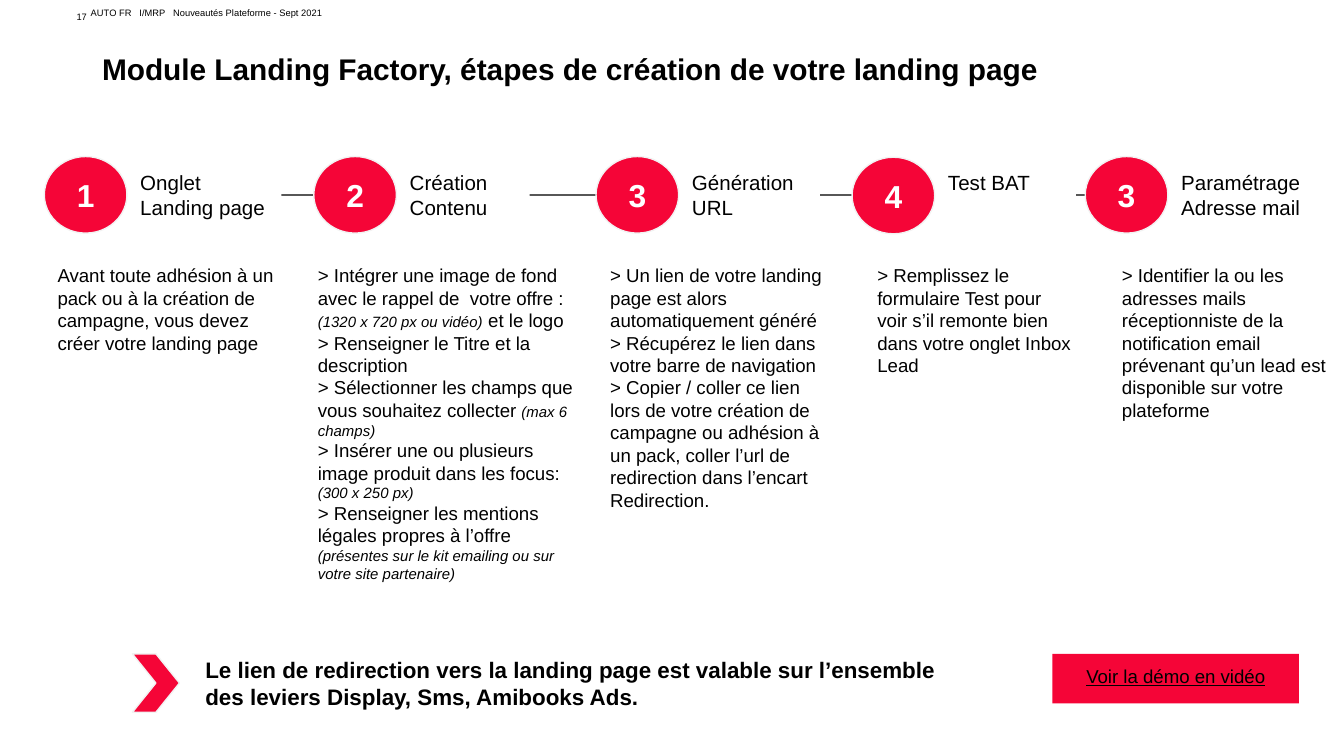
import dataclasses
import typing

import lxml.etree
import pptx
import pptx.dml.color
import pptx.enum.shapes
import pptx.enum.text
import pptx.oxml.ns
import pptx.util

EMU_PER_PX = 4572
RED = "F50537"
BLACK = "000000"
WHITE = "FFFFFF"
PALE = "F2F2F2"
GREY = "575757"
STEP_TOP = 233
CIRCLE_WIDTH = 123
STEP_HEIGHT = 114
DETAILS_TOP = 373

Box = tuple[int, int, int, int]
Align = pptx.enum.text.PP_ALIGN
Anchor = pptx.enum.text.MSO_ANCHOR
AutoSize = pptx.enum.text.MSO_AUTO_SIZE
Preset = pptx.enum.shapes.MSO_SHAPE


@dataclasses.dataclass(frozen=True)
class Step:
    number: str
    label: str
    left: int
    label_width: int
    details: str
    details_left: int
    details_width: int
    details_height: int
    placeholder: typing.Optional[int] = None
    label_height: int = STEP_HEIGHT
    top: int = STEP_TOP


STEPS = [
    Step("1", "Onglet\nLanding page", 66, 230,
         "Avant toute adhésion à un pack ou à la création de campagne, "
         "vous devez créer votre landing page", 66, 374, 176),
    Step("2", "Création\nContenu", 467, 198,
         "> Intégrer une image de fond avec le rappel de  votre offre : "
         "*(1320 x 720 px ou vidéo)* et le logo\n"
         "> Renseigner le Titre et la description\n"
         "> Sélectionner les champs que vous souhaitez collecter *(max 6 champs)*\n"
         "> Insérer une ou plusieurs image produit dans les focus: *(300 x 250 px)*\n"
         "> Renseigner les mentions légales propres à l’offre "
         "*(présentes sur le kit emailing ou sur votre site partenaire)*",
         453, 420, 518, placeholder=1),
    Step("3", "Génération URL", 887, 210,
         "> Un lien de votre landing page est alors automatiquement généré\n"
         "> Récupérez le lien dans votre barre de navigation "
         "> Copier / coller ce lien lors de votre création de campagne ou adhésion "
         "à un pack, coller l’url de redirection dans l’encart Redirection.",
         888, 366, 410, placeholder=2),
    Step("4", "Test BAT", 1268, 210,
         "> Remplissez le formulaire Test pour voir s’il remonte bien "
         "dans votre onglet Inbox Lead", 1286, 332, 208, label_height=78, top=234),
    Step("3", "Paramétrage Adresse mail", 1615, 262,
         "> Identifier la ou les adresses mails réceptionniste de la notification email "
         "prévenant qu’un lead est disponible sur votre plateforme", 1650, 348, 276),
]


def px(length: int) -> int:
    return pptx.util.Emu(length * EMU_PER_PX)


def color(value: str) -> pptx.dml.color.RGBColor:
    return pptx.dml.color.RGBColor.from_string(value)


def write(shape, text: str, *, size: int = 10, fill: str = BLACK, bold: bool = False,
          underline: bool = False, align=Align.LEFT, anchor=Anchor.TOP,
          inset: int = 20, line_spacing: float = 1.0,
          auto_size=AutoSize.SHAPE_TO_FIT_TEXT) -> None:
    frame = shape.text_frame
    frame.word_wrap = True
    frame.auto_size = auto_size
    frame.vertical_anchor = anchor
    frame.margin_left = frame.margin_right = px(inset)
    frame.margin_top = frame.margin_bottom = px(inset)
    for index, content in enumerate(text.split("\n")):
        paragraph = frame.add_paragraph() if index else frame.paragraphs[0]
        paragraph.alignment = align
        paragraph.line_spacing = line_spacing
        paragraph.space_before = paragraph.space_after = pptx.util.Pt(0)
        properties = paragraph._p.get_or_add_pPr()
        properties.set("marL", "0")
        properties.set("indent", "0")
        lxml.etree.SubElement(properties, pptx.oxml.ns.qn("a:buNone"))
        for position, piece in enumerate(content.split("*")):
            if not piece:
                continue
            is_note = position % 2 == 1
            run = paragraph.add_run()
            run.text = piece
            run.font.name = "Arial"
            run.font.size = pptx.util.Pt(8 if is_note else size)
            run.font.italic = is_note
            run.font.bold = bold
            run.font.underline = underline
            run.font.color.rgb = color(fill)


def place(shape, box: Box) -> None:
    shape.left, shape.top, shape.width, shape.height = map(px, box)


def add_text(slide, box: Box, text: str, **text_format) -> None:
    write(slide.shapes.add_textbox(*map(px, box)), text, **text_format)


def add_preset(slide, preset, box: Box, fill: str, outline: typing.Optional[str] = None):
    shape = slide.shapes.add_shape(preset, *map(px, box))
    shape.shadow.inherit = False
    shape.fill.solid()
    shape.fill.fore_color.rgb = color(fill)
    if outline:
        shape.line.color.rgb = color(outline)
        shape.line.width = pptx.util.Pt(0.75)
    else:
        shape.line.fill.background()
    return shape


def add_timeline(slide, left: int, right: int, top: int) -> None:
    connector = slide.shapes.add_connector(
        pptx.enum.shapes.MSO_CONNECTOR.STRAIGHT, px(left), px(top), px(right), px(top))
    connector.line.color.rgb = color(GREY)
    connector.line.width = pptx.util.Pt(0.75)
    lxml.etree.SubElement(connector._element.spPr, pptx.oxml.ns.qn("a:effectLst"))


def add_step(slide, step: Step) -> None:
    label_box = (step.left + CIRCLE_WIDTH, step.top, step.label_width, step.label_height)
    write(add_preset(slide, Preset.RECTANGLE, label_box, WHITE), step.label, size=11)
    circle_box = (step.left, step.top, CIRCLE_WIDTH, STEP_HEIGHT)
    circle = add_preset(slide, Preset.OVAL, circle_box, RED, PALE)
    write(circle, step.number, size=17, fill=WHITE, bold=True, align=Align.CENTER,
          anchor=Anchor.MIDDLE, auto_size=AutoSize.NONE)
    details_box = (step.details_left, DETAILS_TOP, step.details_width, step.details_height)
    if step.placeholder is None:
        add_text(slide, details_box, step.details)
    else:
        body = slide.placeholders[step.placeholder]
        place(body, details_box)
        write(body, step.details)


def main() -> None:
    presentation = pptx.Presentation()
    presentation.slide_width = px(2000)
    presentation.slide_height = px(1125)
    slide = presentation.slides.add_slide(presentation.slide_layouts.get_by_name("Two Content"))

    title = slide.shapes.title
    place(title, (152, 70, 1740, 120))
    write(title, "Module Landing Factory, étapes de création de votre landing page",
          size=16, bold=True, inset=0, line_spacing=1.1, auto_size=AutoSize.NONE)
    header_format = dict(size=5, anchor=Anchor.MIDDLE, inset=0, auto_size=AutoSize.NONE)
    add_text(slide, (114, 12, 68, 26), "17", **header_format)
    add_text(slide, (135, 9, 1346, 20), "AUTO FR   I/MRP   Nouveautés Plateforme - Sept 2021",
             **header_format)

    add_timeline(slide, STEPS[0].left + CIRCLE_WIDTH, STEPS[-1].left, 290)
    for step in STEPS:
        add_step(slide, step)

    add_preset(slide, Preset.CHEVRON, (197, 973, 70, 87), RED, PALE)
    add_text(slide, (286, 957, 1186, 122),
             "Le lien de redirection vers la landing page est valable sur l’ensemble "
             "des leviers Display, Sms, Amibooks Ads.", size=12, bold=True)
    button = add_preset(slide, Preset.RECTANGLE, (1566, 973, 367, 74), RED)
    write(button, "Voir la démo en vidéo", underline=True, align=Align.CENTER)

    presentation.save("out.pptx")


if __name__ == "__main__":
    main()
